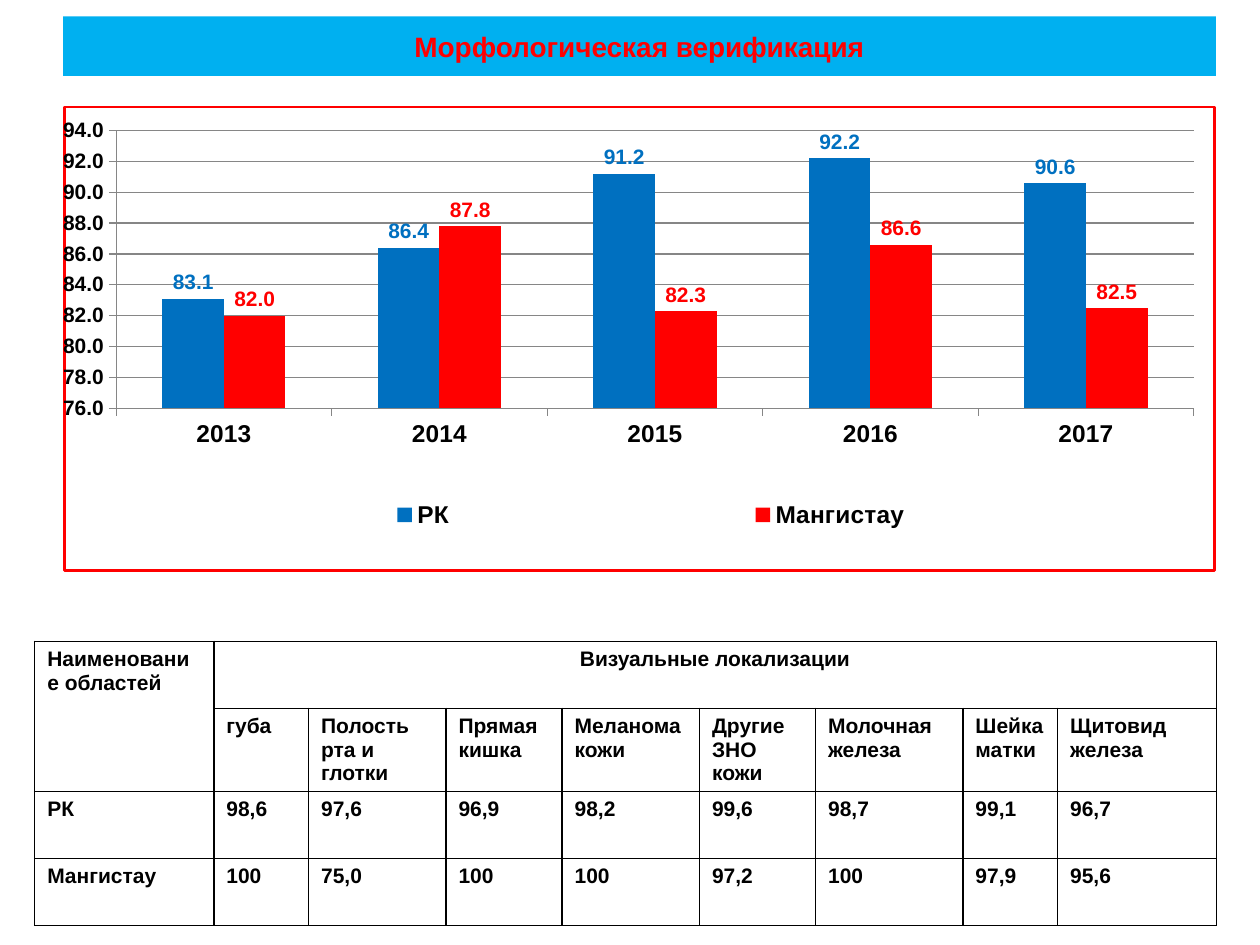
from lxml import etree
from pptx import Presentation
from pptx.chart.data import CategoryChartData
from pptx.dml.color import RGBColor
from pptx.enum.chart import XL_CHART_TYPE, XL_LABEL_POSITION, XL_LEGEND_POSITION, XL_TICK_MARK
from pptx.enum.text import MSO_ANCHOR, PP_ALIGN
from pptx.oxml import parse_xml
from pptx.oxml.ns import nsdecls, qn
from pptx.util import Cm, Pt

COLUMNS = XL_CHART_TYPE.COLUMN_CLUSTERED
OUTSIDE_END = XL_LABEL_POSITION.OUTSIDE_END
LEGEND_RIGHT = XL_LEGEND_POSITION.RIGHT
TICK_OUTSIDE = XL_TICK_MARK.OUTSIDE
MIDDLE = MSO_ANCHOR.MIDDLE
CENTER = PP_ALIGN.CENTER

THEME = {
    "font": "Arial",
    "black": RGBColor(0, 0, 0),
    "red": RGBColor(255, 0, 0),
    "blue": RGBColor(0, 112, 192),
    "banner": RGBColor(0, 176, 240),
    "grid": RGBColor(134, 134, 134),
    "title_size": Pt(16),
    "chart_size": Pt(18),
    "category_size": Pt(14),
    "small_size": Pt(12),
}


def style_font(font, size, color):
    font.name = THEME["font"]
    font.size = size
    font.bold = True
    font.color.rgb = color


def place_in_chart(element, index, target, bounds):
    for layout in element.findall(qn("c:layout")):
        element.remove(layout)
    layout = etree.Element(qn("c:layout"))
    manual = etree.SubElement(layout, qn("c:manualLayout"))
    settings = [("layoutTarget", target)] if target else []
    settings += [("xMode", "edge"), ("yMode", "edge")]
    settings += zip("xywh", bounds)
    for tag, value in settings:
        etree.SubElement(manual, qn(f"c:{tag}")).set("val", str(value))
    element.insert(index, layout)


deck = Presentation()
deck.slide_width = Cm(25.4)
deck.slide_height = Cm(19.05)
page = deck.slides.add_slide(deck.slide_layouts[5])

title = page.shapes.title
title.left, title.top, title.width, title.height = Cm(1.27), Cm(0.33), Cm(23.24), Cm(1.2)
title.fill.solid()
title.fill.fore_color.rgb = THEME["banner"]
title.text_frame.text = "Морфологическая верификация"
title.text_frame.vertical_anchor = MIDDLE
heading = title.text_frame.paragraphs[0]
heading.alignment = CENTER
style_font(heading.runs[0].font, THEME["title_size"], THEME["red"])

regions = [
    ("РК", (83.1, 86.4, 91.2, 92.2, 90.6), THEME["blue"]),
    ("Мангистау", (82, 87.8, 82.3, 86.6, 82.5), THEME["red"]),
]
data = CategoryChartData(number_format="0.0")
data.categories = ["2013", "2014", "2015", "2016", "2017"]
for name, values, color in regions:
    data.add_series(name, values)
chart = page.shapes.add_chart(COLUMNS, Cm(1.27), Cm(2.13), Cm(23.24), Cm(9.4), data).chart
chart.has_title = False
style_font(chart.font, THEME["chart_size"], THEME["black"])

plot = chart.plots[0]
plot.gap_width = 150
plot.overlap = 0
plot.vary_by_categories = False
for series, (name, values, color) in zip(plot.series, regions):
    series.format.fill.solid()
    series.format.fill.fore_color.rgb = color
    series.invert_if_negative = False
    labels = series.data_labels
    labels.show_value = True
    labels.position = OUTSIDE_END
    labels.number_format = "0.0"
    labels.number_format_is_linked = False
    style_font(labels.font, THEME["small_size"], color)

category_axis, value_axis = chart.category_axis, chart.value_axis
for axis, size in [(category_axis, THEME["category_size"]), (value_axis, THEME["small_size"])]:
    axis.major_tick_mark = TICK_OUTSIDE
    axis.format.line.color.rgb = THEME["grid"]
    style_font(axis.tick_labels.font, size, THEME["black"])
value_axis.minimum_scale = 76
value_axis.maximum_scale = 94
value_axis.major_unit = 2
value_axis.has_major_gridlines = True
value_axis.major_gridlines.format.line.color.rgb = THEME["grid"]
value_axis.tick_labels.number_format = "0.0"
value_axis.tick_labels.number_format_is_linked = False

chart.has_legend = True
legend = chart.legend
legend.position = LEGEND_RIGHT
legend.include_in_layout = False
style_font(legend.font, THEME["category_size"], THEME["black"])

chart_space = chart.element
chart_root = chart_space.find(qn("c:chart"))
place_in_chart(chart_root.find(qn("c:plotArea")), 0, "inner", (0.045, 0.051, 0.937, 0.599))
place_in_chart(chart_root.find(qn("c:legend")), 1, None, (0.03, 0.8, 0.96, 0.16))
chart_root.addnext(parse_xml(
    f'<c:spPr {nsdecls("c", "a")}><a:noFill/><a:ln w="{Pt(1.5)}"><a:solidFill>'
    f'<a:srgbClr val="{THEME["red"]}"/></a:solidFill></a:ln></c:spPr>'
))

rows = [
    ["Наименование областей", "Визуальные локализации"] + [""] * 7,
    ["", "губа", "Полость рта и глотки", "Прямая кишка", "Меланома кожи",
     "Другие ЗНО кожи", "Молочная железа", "Шейка матки", "Щитовид железа"],
    ["РК", "98,6", "97,6", "96,9", "98,2", "99,6", "98,7", "99,1", "96,7"],
    ["Мангистау", "100", "75,0", "100", "100", "97,2", "100", "97,9", "95,6"],
]
column_widths = [3.61, 1.91, 2.77, 2.34, 2.77, 2.34, 2.97, 1.91, 3.2]
row_height = 1.35
table = page.shapes.add_table(
    len(rows), len(column_widths), Cm(0.7), Cm(12.93),
    Cm(sum(column_widths)), Cm(row_height * len(rows)),
).table
table.first_row = False
table.horz_banding = False
for column, width in zip(table.columns, column_widths):
    column.width = Cm(width)
table.cell(0, 0).merge(table.cell(1, 0))
table.cell(0, 1).merge(table.cell(0, 8))

for row, texts in zip(table.rows, rows):
    row.height = Cm(row_height)
    for cell, text in zip(row.cells, texts):
        properties = cell._tc.get_or_add_tcPr()
        for side in ("lnL", "lnR", "lnT", "lnB"):
            properties.append(parse_xml(
                f'<a:{side} {nsdecls("a")} w="{Pt(1)}"><a:solidFill>'
                f'<a:srgbClr val="{THEME["black"]}"/></a:solidFill></a:{side}>'
            ))
        cell.fill.background()
        if text:
            cell.text_frame.text = text
            span = cell.text_frame.paragraphs[0].runs[0]
            style_font(span.font, THEME["small_size"], THEME["black"])
table.cell(0, 1).text_frame.paragraphs[0].alignment = CENTER

deck.save("out.pptx")
